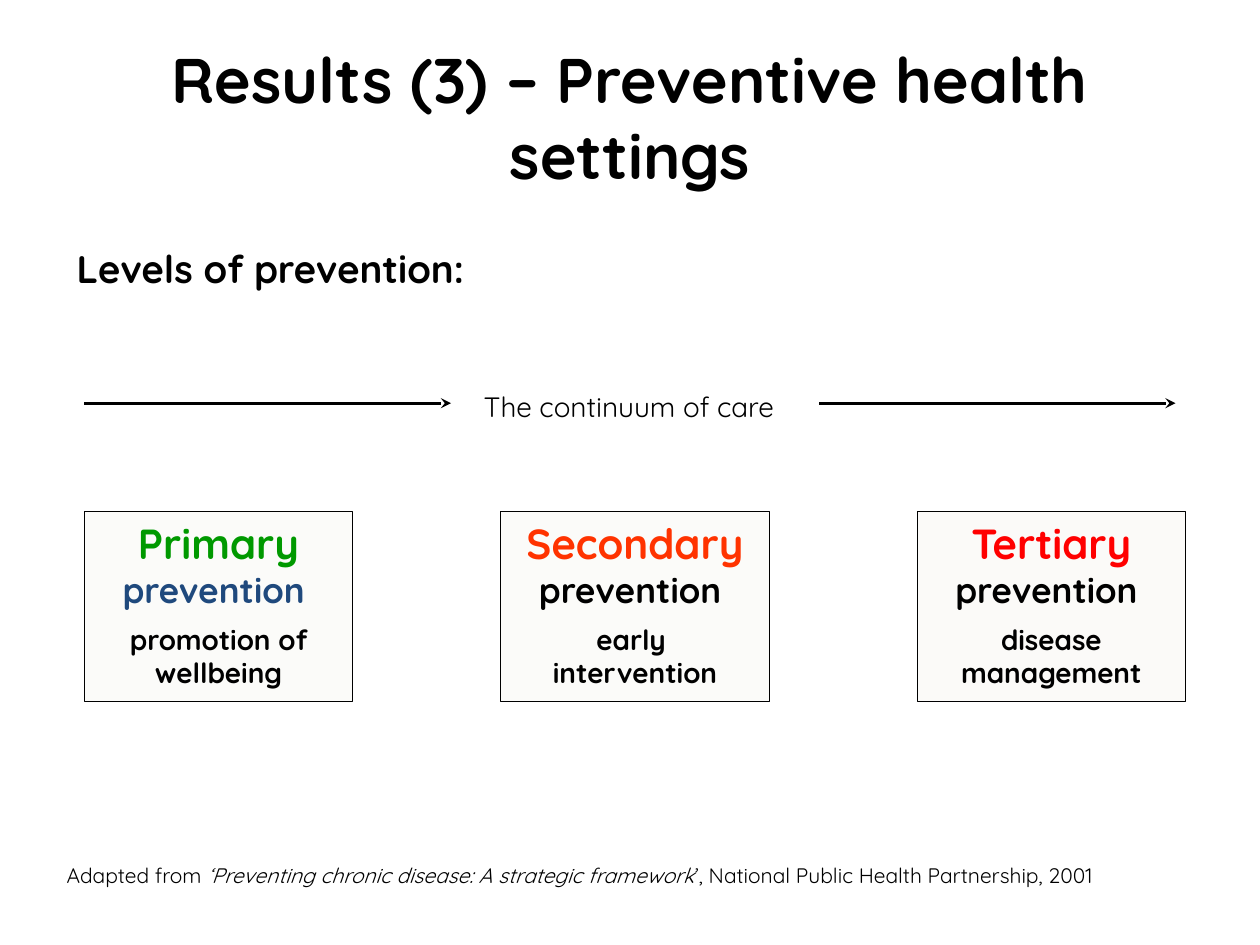
import dataclasses
import typing

import lxml.etree
import pptx
import pptx.dml.color
import pptx.enum.shapes
import pptx.enum.text
import pptx.oxml.ns
import pptx.util

Inches = pptx.util.Inches
Pt = pptx.util.Pt
qn = pptx.oxml.ns.qn
Align = pptx.enum.text.PP_ALIGN


@dataclasses.dataclass(frozen=True)
class Theme:
    font: str = "Quicksand"
    black: str = "000000"
    blue: str = "1F497D"
    green: str = "009900"
    orange: str = "FF3300"
    red: str = "FF0000"
    card_fill: str = "EEECE1"
    title_size: int = 36
    level_size: int = 24
    heading_size: int = 22
    prevention_size: int = 20
    body_size: int = 16
    source_size: int = 12
    arrow_width: float = 1.5
    border_width: float = 0.75


THEME = Theme()


class Span(typing.NamedTuple):
    text: str
    size: int
    color: str = THEME.black
    bold: bool = False
    italic: bool = False


class Box(typing.NamedTuple):
    left: float
    top: float
    width: float
    height: float


class Level(typing.NamedTuple):
    name: str
    name_color: str
    prevention_color: str
    detail: str
    opacity: int


class Arrow(typing.NamedTuple):
    start: float
    end: float


LEVELS = [
    Level("Primary", THEME.green, THEME.blue, "promotion of wellbeing", 20),
    Level("Secondary", THEME.orange, THEME.black, "early \vintervention", 20),
    Level("Tertiary", THEME.red, THEME.black, "disease management", 22),
]
ARROWS = [Arrow(0.67, 3.58), Arrow(6.5, 9.33)]
ARROW_TOP = 3.2
FIRST_CARD = Box(0.67, 4.06, 2.13, 1.51)
CARD_STEP = 3.305


def rgb(color: str) -> pptx.dml.color.RGBColor:
    return pptx.dml.color.RGBColor.from_string(color)


def place(box: Box) -> list:
    return [Inches(length) for length in box]


def write(paragraph, spans: list[Span], align=Align.LEFT, line_spacing: float = 1.0) -> None:
    paragraph.alignment = align
    paragraph.line_spacing = line_spacing
    for span in spans:
        first_new_run = len(paragraph.runs)
        for index, line in enumerate(span.text.split("\v")):
            if index:
                paragraph.add_line_break()
                line_break = paragraph._p.findall(qn("a:br"))[-1]
                lxml.etree.SubElement(line_break, qn("a:rPr"), sz=str(span.size * 100))
            paragraph.add_run().text = line
        for run in paragraph.runs[first_new_run:]:
            run.font.name = THEME.font
            run.font.size = Pt(span.size)
            run.font.bold = span.bold
            run.font.italic = span.italic
            run.font.color.rgb = rgb(span.color)


def add_text(slide, box: Box, spans: list[Span], align=Align.LEFT,
             line_spacing: float = 1.0, anchor=pptx.enum.text.MSO_ANCHOR.TOP) -> None:
    text_frame = slide.shapes.add_textbox(*place(box)).text_frame
    text_frame.word_wrap = True
    text_frame.vertical_anchor = anchor
    write(text_frame.paragraphs[0], spans, align, line_spacing)


def add_arrow(slide, arrow: Arrow) -> None:
    top = Inches(ARROW_TOP)
    connector = slide.shapes.add_connector(
        pptx.enum.shapes.MSO_CONNECTOR.STRAIGHT,
        Inches(arrow.start), top, Inches(arrow.end), top)
    connector.line.color.rgb = rgb(THEME.black)
    connector.line.width = Pt(THEME.arrow_width)
    properties = connector._element.spPr
    lxml.etree.SubElement(properties.find(qn("a:ln")), qn("a:tailEnd"), type="stealth")
    lxml.etree.SubElement(properties, qn("a:effectLst"))


def add_card(slide, level: Level, box: Box) -> None:
    card = slide.shapes.add_shape(pptx.enum.shapes.MSO_SHAPE.RECTANGLE, *place(box))
    card.shadow.inherit = False
    card.fill.solid()
    card.fill.fore_color.rgb = rgb(THEME.card_fill)
    fill_color = card._element.spPr.find(qn("a:solidFill")).find(qn("a:srgbClr"))
    lxml.etree.SubElement(fill_color, qn("a:alpha"), val=str(level.opacity * 1000))
    card.line.color.rgb = rgb(THEME.black)
    card.line.width = Pt(THEME.border_width)
    text_frame = card.text_frame
    text_frame.word_wrap = True
    text_frame.vertical_anchor = pptx.enum.text.MSO_ANCHOR.TOP
    write(text_frame.paragraphs[0], [
        Span(level.name, THEME.level_size, level.name_color, bold=True),
        Span(" ", THEME.prevention_size, level.name_color, bold=True),
        Span("prevention ", THEME.prevention_size, level.prevention_color, bold=True),
    ], Align.CENTER)
    detail = text_frame.add_paragraph()
    detail.space_before = Pt(7)
    write(detail, [Span(level.detail, THEME.body_size, bold=True)], Align.CENTER)


def main() -> None:
    presentation = pptx.Presentation()
    presentation.slide_width = Inches(10)
    presentation.slide_height = Inches(7.5)
    slide = presentation.slides.add_slide(presentation.slide_layouts[6])

    add_text(slide, Box(0.5, 0.3, 9, 1.25),
             [Span("Results (3) – Preventive health settings", THEME.title_size, bold=True)],
             Align.CENTER, anchor=pptx.enum.text.MSO_ANCHOR.MIDDLE)
    add_text(slide, Box(0.51, 1.94, 3.39, 0.55),
             [Span("Levels of prevention:", THEME.heading_size, bold=True)], line_spacing=0.9)
    add_text(slide, Box(3.74, 3.04, 2.68, 0.37),
             [Span("The continuum of care", THEME.body_size)])
    for arrow in ARROWS:
        add_arrow(slide, arrow)
    for index, level in enumerate(LEVELS):
        add_card(slide, level, FIRST_CARD._replace(left=FIRST_CARD.left + index * CARD_STEP))
    add_text(slide, Box(0.43, 6.82, 9.14, 0.28), [
        Span("Adapted from ", THEME.source_size),
        Span("‘Preventing chronic disease: A strategic framework", THEME.source_size, italic=True),
        Span("’, National Public Health Partnership, 2001", THEME.source_size),
    ], line_spacing=0.9)

    presentation.save("out.pptx")


if __name__ == "__main__":
    main()
